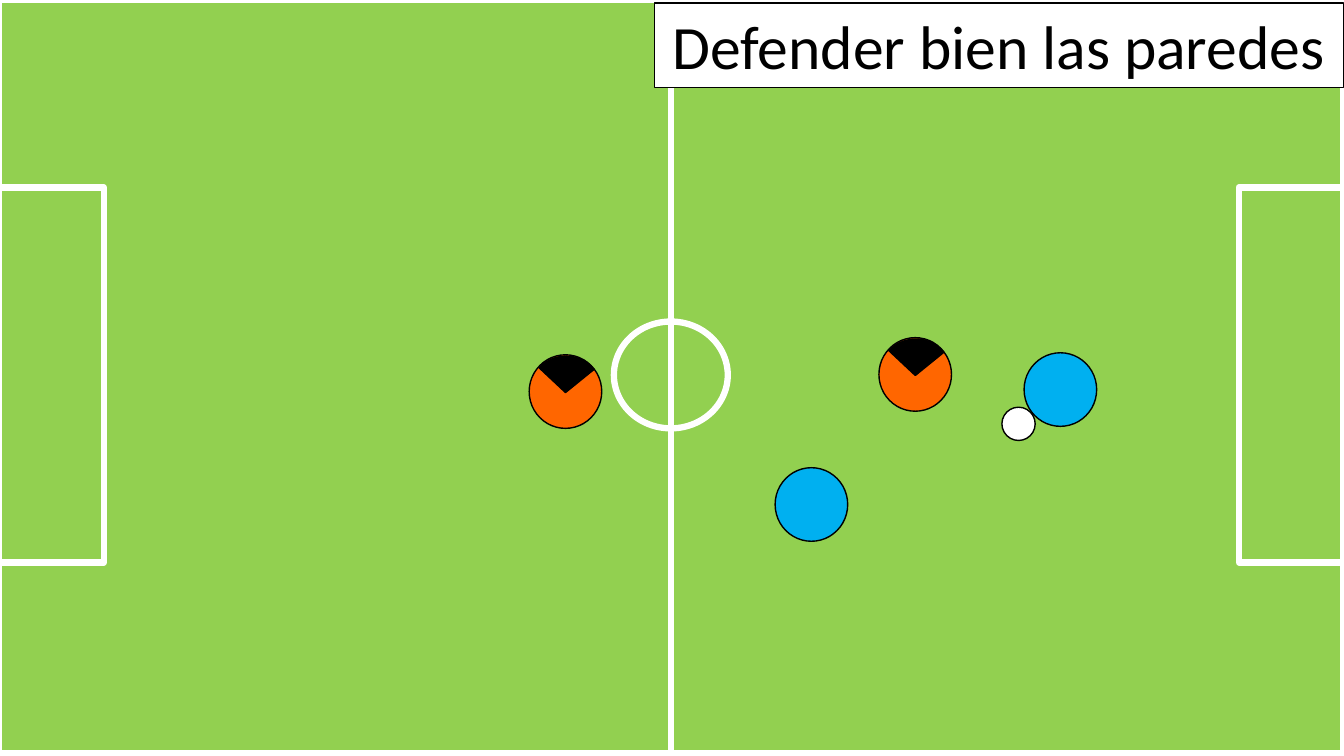
from pptx import Presentation
from pptx.dml.color import RGBColor
from pptx.enum.shapes import MSO_CONNECTOR, MSO_SHAPE
from pptx.enum.text import MSO_ANCHOR, MSO_AUTO_SIZE, PP_ALIGN
from pptx.oxml.ns import qn
from pptx.util import Inches, Pt
from lxml.etree import SubElement

COLUMNS, ROWS = 160, 90


def paint(target, color):
    target.solid()
    target.fore_color.rgb = RGBColor.from_string(color)


class Board:
    """Draws a football drill on a grid of 160 columns by 90 rows."""

    font = "Calibri"
    grass, chalk, ink = "92D050", "FFFFFF", "000000"
    defender_color, attacker_color = "FF6600", "00B0F0"
    chalk_width, outline_width = 4.5, 1
    player_size = (8.64, 8.76)

    def __init__(self, deck):
        self.deck = deck
        self.page = deck.slides.add_slide(deck.slide_layouts[5])

    def across(self, columns):
        return round(self.deck.slide_width * columns / COLUMNS)

    def down(self, rows):
        return round(self.deck.slide_height * rows / ROWS)

    def frame(self, left, top, width, height):
        return self.across(left), self.down(top), self.across(width), self.down(height)

    def stroke(self, shape, color, width):
        paint(shape.line.fill, color)
        shape.line.width = Pt(width)

    def shape(self, kind, place, fill=None, line=None, width=outline_width, parent=None):
        shape = (parent or self.page).shapes.add_shape(kind, *self.frame(*place))
        shape.shadow.inherit = False
        if fill:
            paint(shape.fill, fill)
        else:
            shape.fill.background()
        if line:
            self.stroke(shape, line, width)
        else:
            shape.line.fill.background()
        return shape

    def marking(self, kind, place, parent):
        return self.shape(kind, place, None, self.chalk, self.chalk_width, parent)

    def halfway_line(self, column, top, bottom, parent):
        line = parent.shapes.add_connector(
            MSO_CONNECTOR.STRAIGHT,
            self.across(column), self.down(top), self.across(column), self.down(bottom))
        self.stroke(line, self.chalk, self.chalk_width)
        SubElement(line.element.spPr, qn("a:effectLst"))

    def pitch(self):
        group = self.page.shapes.add_group_shape()
        self.shape(MSO_SHAPE.RECTANGLE, (-0.12, -0.36, COLUMNS, ROWS), self.grass, parent=group)
        self.halfway_line(79.92, -0.36, 89.64, group)
        self.marking(MSO_SHAPE.OVAL, (73.08, 38.28, 13.56, 12.72), group)
        for left in (-0.12, 147.48):
            self.marking(MSO_SHAPE.RECTANGLE, (left, 22.32, 12.48, 44.64), group)
        self.marking(MSO_SHAPE.RECTANGLE, (-0.12, 0, COLUMNS, 89.64), group)

    def disc(self, left, top, size, color, parent=None):
        self.shape(MSO_SHAPE.OVAL, (left, top, *size), color, self.ink, parent=parent)

    def defender(self, left, top):
        group = self.page.shapes.add_group_shape()
        self.disc(left, top, self.player_size, self.defender_color, group)
        wedge = self.shape(MSO_SHAPE.PIE, (left, top + 0.12, *self.player_size),
                           self.ink, self.ink, parent=group)
        wedge.adjustments[0], wedge.adjustments[1] = 103.32, 162
        wedge.rotation = 51

    def attacker(self, left, top):
        self.disc(left, top, self.player_size, self.attacker_color)

    def ball(self, left, top):
        self.disc(left, top, (3.96, 3.96), self.chalk)

    def title(self, text, place):
        box = self.page.shapes.title
        box.left, box.top, box.width, box.height = self.frame(*place)
        paint(box.fill, self.chalk)
        self.stroke(box, self.ink, 0.75)
        frame = box.text_frame
        frame.text = text
        frame.word_wrap = True
        frame.auto_size = MSO_AUTO_SIZE.SHAPE_TO_FIT_TEXT
        frame.vertical_anchor = MSO_ANCHOR.TOP
        frame.margin_left = frame.margin_right = Inches(0.1)
        frame.margin_top = frame.margin_bottom = Inches(0.05)
        para = frame.paragraphs[0]
        para.alignment = PP_ALIGN.CENTER
        para.font.name, para.font.size = self.font, Pt(44)
        para.font.color.rgb = RGBColor.from_string(self.ink)
        box.element.getparent().append(box.element)


def main():
    deck = Presentation()
    deck.slide_width, deck.slide_height = Inches(13.33), Inches(7.5)
    board = Board(deck)
    board.pitch()
    for place in ((63, 42.24), (104.64, 40.2)):
        board.defender(*place)
    board.attacker(121.92, 42)
    board.title("Defender bien las paredes", (77.88, 0.36, 82.08, 10.08))
    board.attacker(92.28, 55.68)
    board.ball(119.28, 48.48)
    deck.save("out.pptx")


if __name__ == "__main__":
    main()
